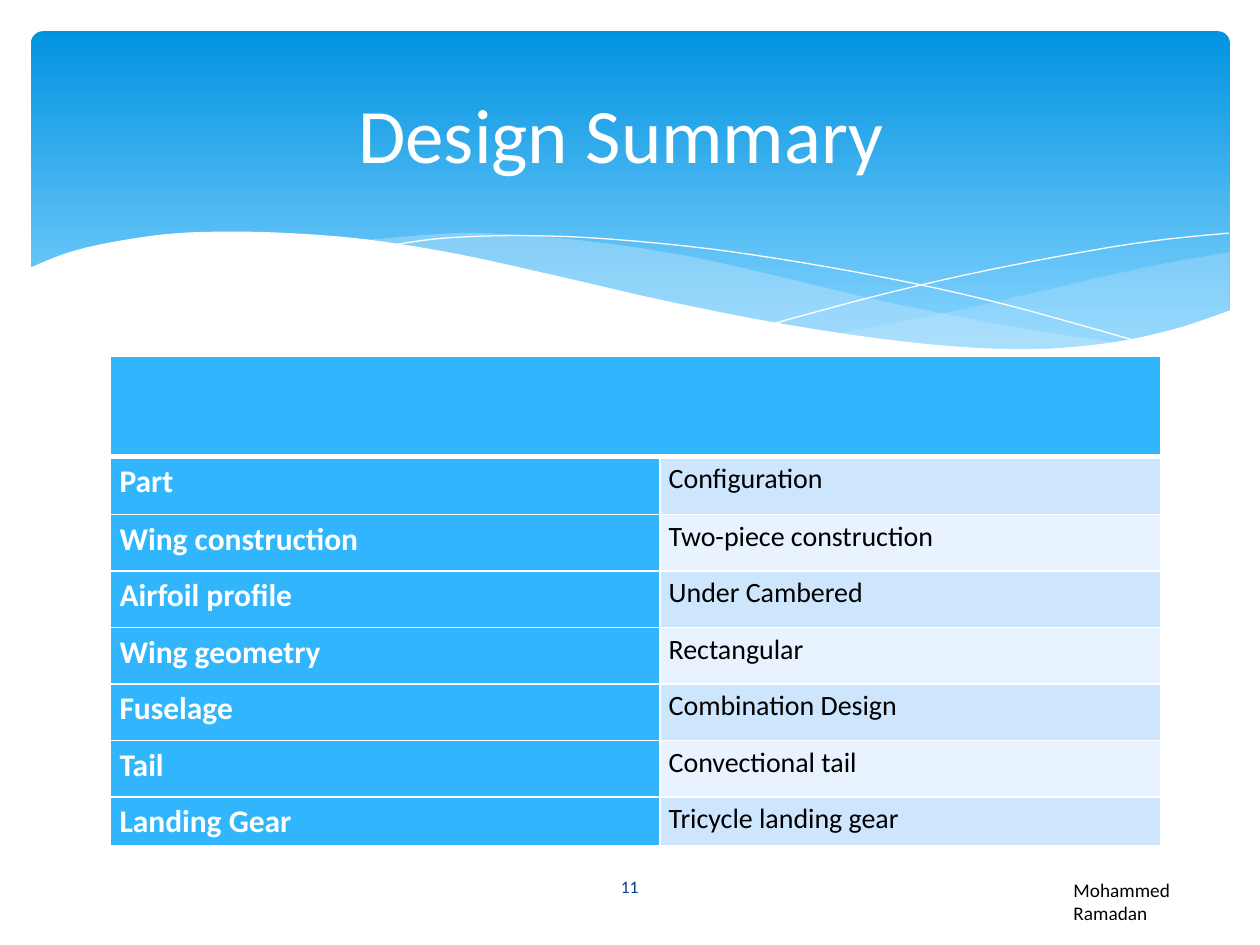
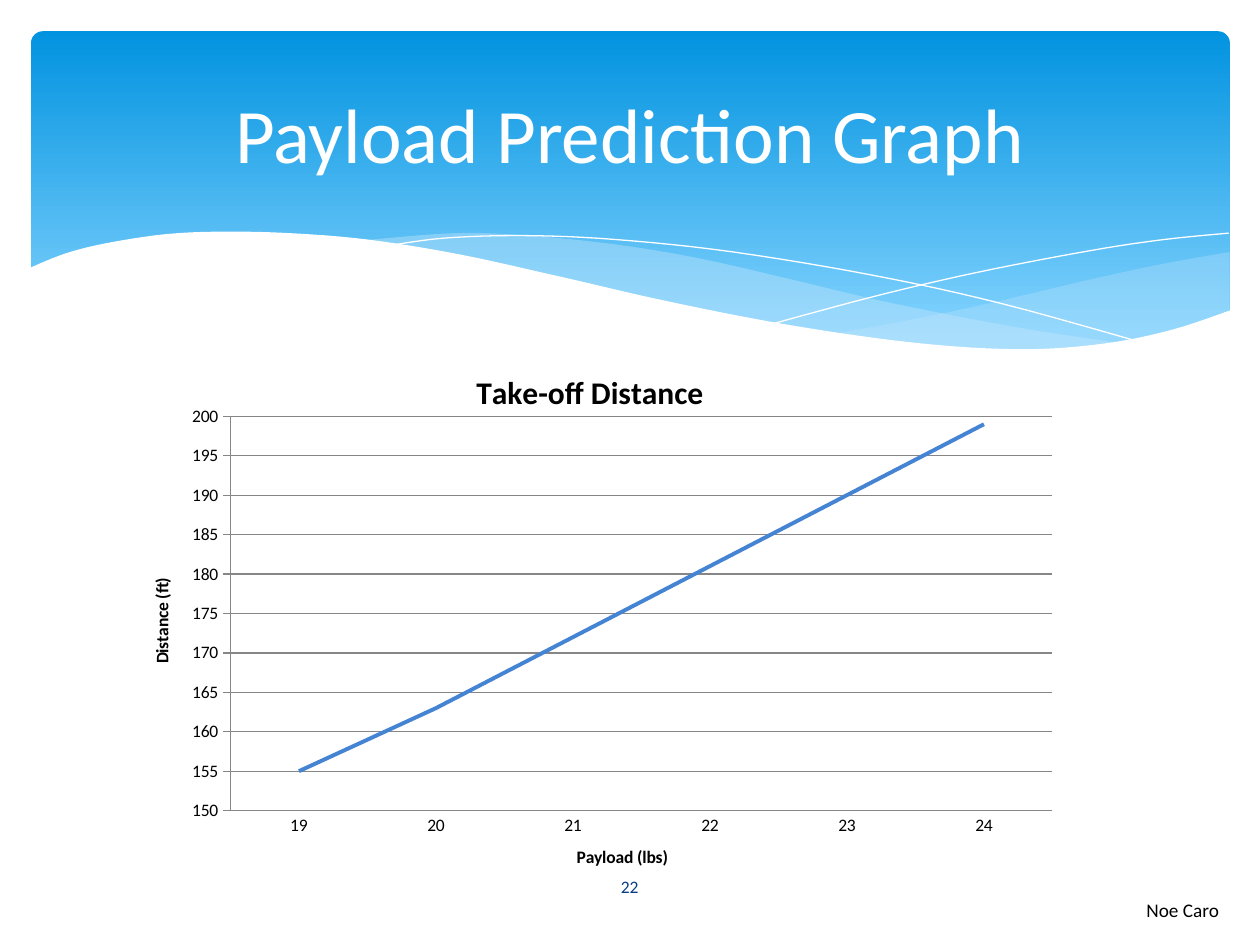
from dataclasses import dataclass
from typing import NamedTuple

from pptx import Presentation
from pptx import util as u
from pptx.chart.data import CategoryChartData
from pptx.dml.color import RGBColor
from pptx.enum import chart as charts, shapes, text
from pptx.oxml import parse_xml
from pptx.oxml.ns import nsdecls, qn


@dataclass(frozen=True)
class Theme:
    font: str = "Calibri"
    white: str = "FFFFFF"
    black: str = "000000"
    band_top: str = "0293E0"
    band_bottom: str = "83D3FE"
    swell: str = "C6E7FC"
    accent: str = "31B6FD"
    row_dark: str = "CEE5FE"
    row_light: str = "E8F3FF"
    number: str = "073E87"
    series: str = "4584D3"
    grid: str = "868686"
    title_size: int = 44
    label_size: int = 18
    value_size: int = 16
    author_size: int = 11
    small_size: int = 10


class Box(NamedTuple):
    """Left, top, width and height in centimetres."""
    left: float
    top: float
    width: float
    height: float

    def lengths(self):
        return [u.Cm(value) for value in self]


THEME = Theme()
BAND_BOX = Box(0.63, 0.63, 24.16, 6.86)
TITLE_BOX = Box(1.27, 0.94, 22.86, 3.48)
NUMBER_BOX = Box(11.08, 17.37, 3.23, 1.02)

# Wave anchors in centimetres from the band's top left corner
RIGHT_SWELL_TOP = [(24.16, 4.45), (22.76, 4.7), (21.24, 5.03), (19.16, 5.52),
                   (17.3, 5.9), (16.16, 6.1)]
RIGHT_SWELL_BOTTOM = [(16.16, 6.1), (17.63, 6.28), (19.49, 6.41), (20.81, 6.41),
                      (22.15, 6.23), (23.3, 5.95), (24.16, 5.64)]
LONG_SWELL_TOP = [(22.05, 6.3), (19.87, 5.97), (17.3, 5.47), (15.35, 5.01),
                  (13.47, 4.58), (11.79, 4.3), (10.04, 4.12), (8.54, 4.07),
                  (6.63, 4.22)]
LONG_SWELL_BOTTOM = [(6.63, 4.22), (8.56, 4.53), (10.77, 5.01), (12.83, 5.47),
                     (15.07, 5.92), (17.02, 6.23), (18.7, 6.41), (20.15, 6.43),
                     (22.05, 6.3)]
FALLING_LINE = [(7.22, 4.32), (8.34, 4.17), (9.94, 4.12), (11.79, 4.2),
                (14.15, 4.45), (17.02, 4.93), (19.56, 5.49), (22.41, 6.28)]
RISING_LINE = [(14.94, 5.9), (17.02, 5.34), (19.08, 4.86), (21.37, 4.42),
               (22.84, 4.2), (24.14, 4.07)]
WHITE_WAVE = [(24.19, 5.62), (22.99, 6.02), (21.6, 6.3), (19.92, 6.41),
              (17.81, 6.28), (15.27, 5.92), (12.81, 5.44), (10.72, 4.96),
              (8.64, 4.5), (6.79, 4.2), (5.21, 4.07), (3.87, 4.04),
              (2.72, 4.09), (1.53, 4.27), (0.69, 4.48), (-0.05, 4.78)]
WHITE_BASE = [(-0.05, 7.73), (24.19, 7.73)]

DESIGN_ROWS = [
    ("Part", "Configuration"),
    ("Wing construction", "Two-piece construction"),
    ("Airfoil profile", "Under Cambered"),
    ("Wing geometry", "Rectangular"),
    ("Fuselage", "Combination Design"),
    ("Tail", "Convectional tail"),
    ("Landing Gear", "Tricycle landing gear"),
]
TAKE_OFF = {"19": 155, "20": 163, "21": 172, "22": 181, "23": 190, "24": 199}


def rgb(color):
    return RGBColor.from_string(color)


def style_font(font, size, color, bold=False):
    font.name = THEME.font
    font.size = u.Pt(size)
    font.bold = bold
    font.color.rgb = rgb(color)


def style_paragraph(paragraph, size, color, bold=False):
    for run in paragraph.runs:
        style_font(run.font, size, color, bold)


# Header band

def smooth(anchors, steps=6):
    """Points of a Catmull-Rom curve through the anchors."""
    padded = [anchors[0], *anchors, anchors[-1]]
    points = [anchors[0]]
    for a, b, c, d in zip(padded, padded[1:], padded[2:], padded[3:]):
        for step in range(1, steps + 1):
            t = step / steps
            points.append(tuple(
                (2 * q + (r - p) * t + (2 * p - 5 * q + 4 * r - s) * t ** 2
                 + (3 * q - p - 3 * r + s) * t ** 3) / 2
                for p, q, r, s in zip(a, b, c, d)))
    return points


def add_wave(slide, box, points, fill=None, opacity=100):
    """A filled wave, or a white hairline when there is no fill."""
    placed = [(u.Cm(box.left + x), u.Cm(box.top + y)) for x, y in points]
    builder = slide.shapes.build_freeform(*placed[0])
    builder.add_line_segments(placed[1:], close=fill is not None)
    shape = builder.convert_to_shape()
    shape.shadow.inherit = False
    if fill is None:
        shape.fill.background()
        shape.line.color.rgb = rgb(THEME.white)
        shape.line.width = u.Pt(0)
        return shape
    shape.fill.solid()
    shape.fill.fore_color.rgb = rgb(fill)
    shape.line.fill.background()
    if opacity < 100:
        color = shape.element.spPr.find(qn("a:solidFill"))[0]
        color.append(parse_xml(
            f'<a:alpha {nsdecls("a")} val="{opacity * 1000}"/>'))
    return shape


def add_band(slide, box):
    band = slide.shapes.add_shape(
        shapes.MSO_SHAPE.ROUNDED_RECTANGLE, *box.lengths())
    band.adjustments[0] = 0.034
    band.shadow.inherit = False
    band.line.fill.background()
    band.fill.gradient()
    band.fill.gradient_angle = 270
    stops = [(0, THEME.band_top), (0.9, THEME.band_bottom)]
    for stop, (position, color) in zip(band.fill.gradient_stops, stops):
        stop.position = position
        stop.color.rgb = rgb(color)
    return [
        band,
        add_wave(slide, box, smooth(RIGHT_SWELL_TOP) + smooth(RIGHT_SWELL_BOTTOM),
                 THEME.swell, 29),
        add_wave(slide, box, smooth(LONG_SWELL_TOP) + smooth(LONG_SWELL_BOTTOM),
                 THEME.swell, 40),
        add_wave(slide, box, smooth(FALLING_LINE)),
        add_wave(slide, box, smooth(RISING_LINE)),
        add_wave(slide, box, smooth(WHITE_WAVE) + WHITE_BASE, THEME.white),
    ]


def move_to_layout(parts, layout):
    """Put shared parts behind the layout's placeholders."""
    for index, part in enumerate(parts, start=2):
        layout.shapes.element.insert(index, part.element)


# Title and footer

def add_title(slide, box, wording):
    title = slide.shapes.title
    title.left, title.top, title.width, title.height = box.lengths()
    frame = title.text_frame
    frame.text = wording
    frame.vertical_anchor = text.MSO_ANCHOR.MIDDLE
    frame.paragraphs[0].alignment = text.PP_ALIGN.CENTER
    style_paragraph(frame.paragraphs[0], THEME.title_size, THEME.white)


def add_label(slide, box, wording, size, color):
    frame = slide.shapes.add_textbox(*box.lengths()).text_frame
    frame.word_wrap = True
    frame.text = wording
    style_paragraph(frame.paragraphs[0], size, color)
    return frame


def add_footer(slide, number, author, author_box):
    frame = add_label(slide, NUMBER_BOX, number, THEME.small_size, THEME.number)
    frame.vertical_anchor = text.MSO_ANCHOR.MIDDLE
    frame.paragraphs[0].alignment = text.PP_ALIGN.CENTER
    frame = add_label(slide, author_box, author, THEME.author_size, THEME.black)
    frame.auto_size = text.MSO_AUTO_SIZE.SHAPE_TO_FIT_TEXT


# Design table

def fill_cell(cell, fill, bottom_width=1):
    cell.fill.solid()
    cell.fill.fore_color.rgb = rgb(fill)
    properties = cell._tc.get_or_add_tcPr()
    for index, side in enumerate("LRTB"):
        width = u.Pt(bottom_width if side == "B" else 1)
        properties.insert(index, parse_xml(
            f'<a:ln{side} {nsdecls("a")} w="{width}"><a:solidFill>'
            f'<a:srgbClr val="{THEME.white}"/></a:solidFill></a:ln{side}>'))


def write_cell(cell, wording, size, color, bold):
    cell.text = wording
    cell.margin_left = cell.margin_right = u.Cm(0.18)
    cell.margin_top = cell.margin_bottom = 0
    paragraph = cell.text_frame.paragraphs[0]
    paragraph.line_spacing = 1.15
    style_paragraph(paragraph, size, color, bold)


def add_design_table(slide, box):
    row_count = len(DESIGN_ROWS) + 1
    table = slide.shapes.add_table(row_count, 2, *box.lengths()).table
    table.first_row = table.horz_banding = False
    for column, width in zip(table.columns, (11.07, box.width - 11.07)):
        column.width = u.Cm(width)
    heights = [2.01, 1.17] + [1.14] * (row_count - 3) + [0.99]
    for row, height in zip(table.rows, heights):
        row.height = u.Cm(height)

    # Empty heading across both columns
    for cell in table.rows[0].cells:
        fill_cell(cell, THEME.accent, bottom_width=3)
    table.cell(0, 0).merge(table.cell(0, 1))

    for index, (part, configuration) in enumerate(DESIGN_ROWS, start=1):
        label, value = table.rows[index].cells
        fill_cell(label, THEME.accent)
        write_cell(label, part, THEME.label_size, THEME.white, True)
        fill_cell(value, THEME.row_dark if index % 2 else THEME.row_light)
        write_cell(value, configuration, THEME.value_size, THEME.black, False)


# Take-off chart

def set_layout(parent, index, target="", **fractions):
    """Fix a chart part's place as fractions of the chart area."""
    old = parent.find(qn("c:layout"))
    if old is not None:
        parent.remove(old)
    inner = f'<c:layoutTarget val="{target}"/>' if target else ""
    modes = "".join(f'<c:{key}Mode val="edge"/>' for key in "xy")
    values = "".join(f'<c:{key} val="{value}"/>' for key, value in fractions.items())
    parent.insert(index, parse_xml(
        f'<c:layout {nsdecls("c")}><c:manualLayout>{inner}{modes}{values}'
        '</c:manualLayout></c:layout>'))


def write_chart_title(title, wording, size):
    title.text_frame.text = wording
    style_paragraph(title.text_frame.paragraphs[0], size, THEME.black, True)


def add_take_off_chart(slide, box):
    data = CategoryChartData()
    data.categories = list(TAKE_OFF)
    data.add_series("Series 1", list(TAKE_OFF.values()))
    chart = slide.shapes.add_chart(
        charts.XL_CHART_TYPE.LINE, *box.lengths(), data).chart
    style_font(chart.font, THEME.small_size, THEME.black)
    chart.has_legend = False
    chart.has_title = True
    write_chart_title(chart.chart_title, "Take-off Distance", THEME.label_size)
    set_layout(chart.chart_title.element, 1, x=0.35, y=0.02)
    set_layout(chart.element.find(".//" + qn("c:plotArea")), 0, "inner",
               x=0.09, y=0.12, w=0.89, h=0.76)

    # Axes
    distance, payload = chart.value_axis, chart.category_axis
    for axis, wording, tick in (
            (payload, "Payload (lbs)", charts.XL_TICK_MARK.NONE),
            (distance, "Distance (ft)", charts.XL_TICK_MARK.OUTSIDE)):
        axis.has_title = True
        write_chart_title(axis.axis_title, wording, THEME.small_size)
        axis.major_tick_mark = tick
        axis.minor_tick_mark = charts.XL_TICK_MARK.NONE
        axis.format.line.color.rgb = rgb(THEME.grid)
    distance.minimum_scale, distance.maximum_scale = 150, 200
    distance.major_unit = 5
    distance.has_major_gridlines = True
    distance.major_gridlines.format.line.color.rgb = rgb(THEME.grid)

    # Line
    plot = chart.plots[0]
    plot.vary_by_categories = False
    series = plot.series[0]
    series.smooth = False
    series.marker.style = charts.XL_MARKER_STYLE.NONE
    series.format.line.color.rgb = rgb(THEME.series)
    series.format.line.width = u.Pt(2.25)


# Slides

def add_design_slide(presentation, layout):
    slide = presentation.slides.add_slide(layout)
    move_to_layout(add_band(slide, BAND_BOX), layout)
    add_title(slide, TITLE_BOX, "Design Summary ")
    add_design_table(slide, Box(2.23, 7.19, 21.16, 9.86))
    add_footer(slide, "11", "Mohammed Ramadan", Box(21.39, 17.58, 4, 0.74))


def add_payload_slide(presentation, layout):
    slide = presentation.slides.add_slide(layout)
    add_title(slide, TITLE_BOX, "Payload Prediction Graph")
    add_take_off_chart(slide, Box(2.97, 7.14, 18.62, 10.46))
    add_footer(slide, "22", "Noe Caro", Box(22.86, 17.98, 2.54, 0.74))


def main():
    presentation = Presentation()
    presentation.slide_width, presentation.slide_height = u.Cm(25.4), u.Cm(19.05)
    title_only = presentation.slide_layouts[5]
    add_design_slide(presentation, title_only)
    add_payload_slide(presentation, title_only)
    presentation.save("out.pptx")


if __name__ == "__main__":
    main()
